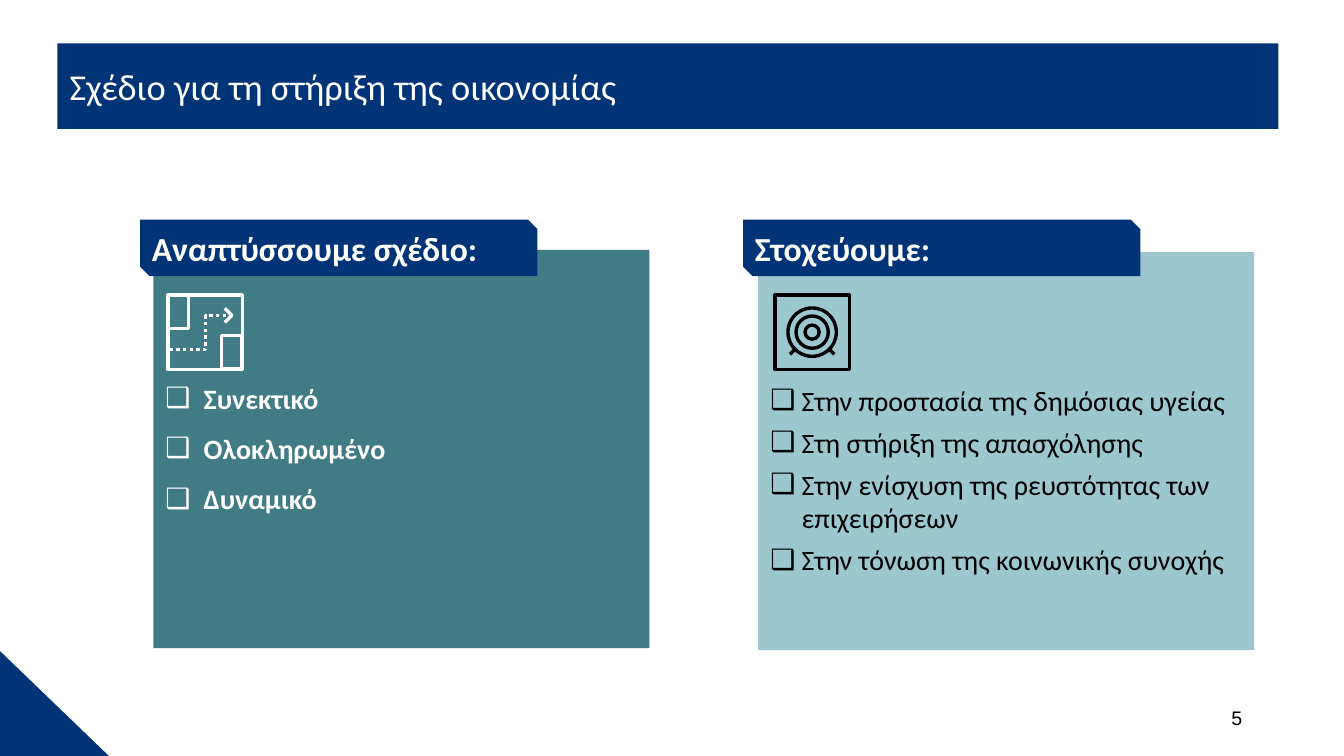
from dataclasses import dataclass

from lxml.etree import SubElement
from pptx import Presentation
from pptx.dml.color import RGBColor
from pptx.enum.dml import MSO_LINE
from pptx.enum.shapes import MSO_SHAPE as SHAPE
from pptx.enum.text import MSO_ANCHOR as ANCHOR, MSO_AUTO_SIZE as FIT, PP_ALIGN as ALIGN
from pptx.oxml.ns import qn
from pptx.util import Inches, Pt


@dataclass(frozen=True)
class Theme:
    navy: str = "013476"
    teal: str = "417B85"
    pale: str = "9CC7CE"
    white: str = "FFFFFF"
    black: str = "000000"
    font: str = "Calibri"
    number_font: str = "Arial"
    title: int = 26
    heading: int = 24
    body: int = 20
    number: int = 14
    icon_line: float = 2.4


T = Theme()
HEADING_SIZE = (3.94, 0.56)
PANEL_SIZE = (4.92, 3.95)
ICON_TOP, ICON_SIZE = 2.91, 0.77

PLAN = ["Συνεκτικό", "Ολοκληρωμένο", "Δυναμικό"]
GOALS = [
    "Στην προστασία της δημόσιας υγείας",
    "Στη στήριξη της απασχόλησης",
    "Στην ενίσχυση της ρευστότητας των επιχειρήσεων",
    "Στην τόνωση της κοινωνικής συνοχής",
]


def set_attrs(obj, values):
    for name, value in values.items():
        setattr(obj, name, value)


def place(sp, *box):
    set_attrs(sp, dict(zip(("left", "top", "width", "height"), map(Inches, box))))


def fill(sp, color):
    sp.fill.solid()
    sp.fill.fore_color.rgb = RGBColor.from_string(color)


def frame(tf, insets, anchor=ANCHOR.TOP):
    set_attrs(tf, {"word_wrap": True, "auto_size": FIT.NONE, "vertical_anchor": anchor})
    sides = ("margin_left", "margin_top", "margin_right", "margin_bottom")
    set_attrs(tf, dict(zip(sides, map(Inches, insets))))


def write(p, text, size, color, bold=False, font=T.font, align=ALIGN.LEFT):
    p.alignment = align
    p.space_before = Pt(0)
    r = p.add_run()
    r.text = text
    set_attrs(r.font, {"name": font, "size": Pt(size), "bold": bold})
    r.font.color.rgb = RGBColor.from_string(color)


def add_bullet(p, indent):
    pPr = p._p.get_or_add_pPr()
    pPr.set("marL", str(Inches(indent)))
    pPr.set("indent", str(-Inches(indent)))
    SubElement(pPr, qn("a:buFont")).set("typeface", T.number_font)
    SubElement(pPr, qn("a:buChar")).set("char", "❑")


def add_solid(slide, kind, box, color):
    sp = slide.shapes.add_shape(kind, *map(Inches, box))
    sp.shadow.inherit = False
    fill(sp, color)
    sp.line.fill.background()
    return sp


def add_title(slide, text):
    sp = slide.shapes.title
    place(sp, 0.57, 0.43, 12.11, 0.85)
    geom = SubElement(sp._element.spPr, qn("a:prstGeom"))
    geom.set("prst", "snip2DiagRect")
    SubElement(geom, qn("a:avLst"))
    fill(sp, T.navy)
    frame(sp.text_frame, (0.12, 0.02, 0.12, 0.02), ANCHOR.MIDDLE)
    write(sp.text_frame.paragraphs[0], text, T.title, T.white)


def add_heading(slide, left, text):
    sp = add_solid(slide, SHAPE.SNIP_2_DIAG_RECTANGLE, (left, 2.18, *HEADING_SIZE), T.navy)
    frame(sp.text_frame, (0.07, 0.03, 0.07, 0.03))
    write(sp.text_frame.paragraphs[0], text, T.heading, T.white, bold=True)


def fill_panel(sp, left, top, color, items, ink, indent, after, bold=False):
    place(sp, left, top, *PANEL_SIZE)
    fill(sp, color)
    tf = sp.text_frame
    frame(tf, (0.12, 1.3, 0.08, 0.04))
    for i, item in enumerate(items):
        p = tf.add_paragraph() if i else tf.paragraphs[0]
        add_bullet(p, indent)
        p.space_after = Pt(after)
        write(p, item, T.body, ink, bold)


def outline(sp, color):
    sp.shadow.inherit = False
    sp.fill.background()
    sp.line.color.rgb = RGBColor.from_string(color)
    sp.line.width = Pt(T.icon_line)


def add_outlined(slide, kind, box, color):
    outline(slide.shapes.add_shape(kind, *map(Inches, box)), color)


def add_polyline(slide, points, color, dash=None):
    pts = [(Inches(x), Inches(y)) for x, y in points]
    builder = slide.shapes.build_freeform(*pts[0])
    builder.add_line_segments(pts[1:], close=False)
    sp = builder.convert_to_shape()
    outline(sp, color)
    if dash:
        sp.line.dash_style = dash


def add_icon_frame(slide, left, color):
    # The line is centred on the edge, so the square sits half a line inside
    half = T.icon_line / 144
    side = ICON_SIZE - 2 * half
    add_outlined(slide, SHAPE.RECTANGLE, (left + half, ICON_TOP + half, side, side), color)


def add_plan_icon(slide, left, color):
    add_icon_frame(slide, left, color)
    for dx, dy in ((0.02, 0.02), (0.55, 0.42)):
        box = (left + dx, ICON_TOP + dy, 0.2, 0.33)
        add_outlined(slide, SHAPE.RECTANGLE, box, color)
    route = [(0.03, 0.56), (0.39, 0.56), (0.39, 0.22), (0.62, 0.22)]
    arrow = [(0.58, 0.15), (0.65, 0.22), (0.58, 0.29)]
    for points, dash in ((route, MSO_LINE.ROUND_DOT), (arrow, None)):
        add_polyline(slide, [(left + x, ICON_TOP + y) for x, y in points], color, dash)


def add_target_icon(slide, left, color):
    add_icon_frame(slide, left, color)
    cx, cy = left + ICON_SIZE / 2, ICON_TOP + ICON_SIZE / 2
    for d in (0.48, 0.32, 0.14):
        add_outlined(slide, SHAPE.OVAL, (cx - d / 2, cy - d / 2, d, d), color)
    for side in (-1, 1):
        foot = [(cx + side * 0.17, cy + 0.17), (cx + side * 0.22, cy + 0.22)]
        add_polyline(slide, foot, color)


def add_number(slide, text):
    tb = slide.shapes.add_textbox(*map(Inches, (9.42, 6.95, 3, 0.4)))
    frame(tb.text_frame, (0.1, 0.05, 0.1, 0.05))
    write(tb.text_frame.paragraphs[0], text, T.number, T.black,
          font=T.number_font, align=ALIGN.RIGHT)


def main():
    prs = Presentation()
    prs.slide_width, prs.slide_height = Inches(13.33), Inches(7.5)
    slide = prs.slides.add_slide(prs.slide_layouts[3])

    # Title banner and corner
    add_title(slide, "Σχέδιο για τη στήριξη της οικονομίας")
    add_solid(slide, SHAPE.RIGHT_TRIANGLE, (0, 6.46, 1.08, 1.04), T.navy)

    # Plan panel
    plan, goals = slide.placeholders[1], slide.placeholders[2]
    fill_panel(plan, 1.52, 2.48, T.teal, PLAN, T.white, indent=0.38, after=12, bold=True)
    add_heading(slide, 1.39, "Αναπτύσσουμε σχέδιο:")
    add_plan_icon(slide, 1.65, T.white)

    # Goals panel
    fill_panel(goals, 7.52, 2.5, T.pale, GOALS, T.black, indent=0.31, after=6)
    add_heading(slide, 7.37, "Στοχεύουμε:")
    add_target_icon(slide, 7.67, T.black)

    # Page number
    add_number(slide, "5")
    prs.save("out.pptx")


if __name__ == "__main__":
    main()
